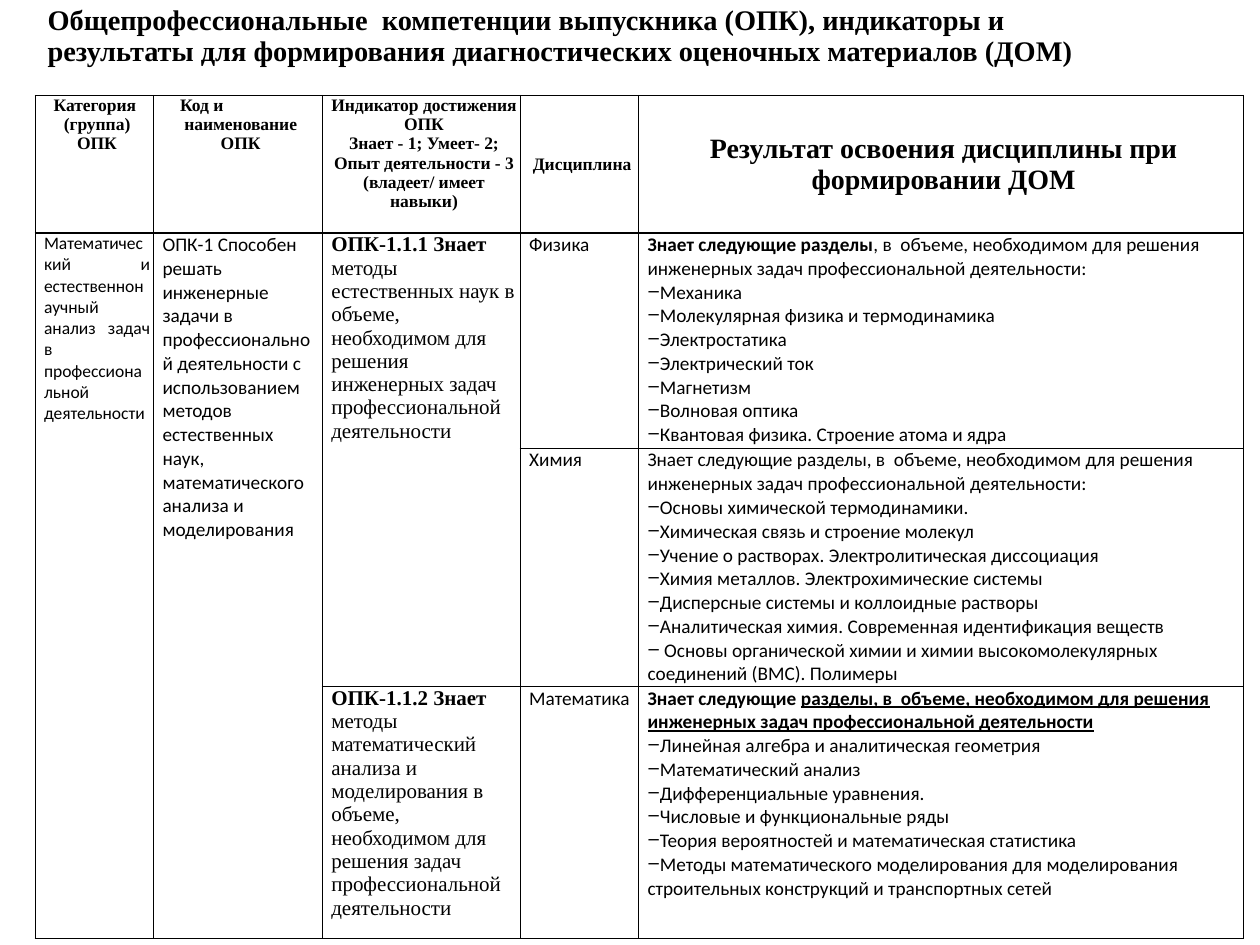
from lxml import etree
from pptx import Presentation
from pptx.dml.color import RGBColor
from pptx.enum.text import MSO_ANCHOR, PP_ALIGN
from pptx.oxml.ns import qn
from pptx.util import Inches, Pt

LEFT, CENTER, JUSTIFY = PP_ALIGN.LEFT, PP_ALIGN.CENTER, PP_ALIGN.JUSTIFY
TOP, MIDDLE = MSO_ANCHOR.TOP, MSO_ANCHOR.MIDDLE
COLORS = {"ink": "000000", "paper": "FFFFFF"}
SERIF, SANS = "Times New Roman", "Calibri"

TITLE = {"name": SERIF, "size": Pt(16.2), "bold": True}
HEADER = {"name": SERIF, "size": Pt(10), "bold": True}
RESULT_HEADER = {**HEADER, "size": Pt(16)}
CATEGORY = {"name": SANS, "size": Pt(10), "bold": False}
BODY = {**CATEGORY, "size": Pt(11)}
BODY_BOLD = {**BODY, "bold": True}
BODY_UNDERLINED = {**BODY_BOLD, "underline": True}
INDICATOR = {"name": SERIF, "size": Pt(12), "bold": False}
INDICATOR_CODE = {**INDICATOR, "bold": True}


def add_runs(paragraph, runs):
    for text, style in runs:
        run = paragraph.add_run()
        run.text = text
        run.font.color.rgb = RGBColor.from_string(COLORS["ink"])
        for attribute, value in style.items():
            setattr(run.font, attribute, value)


def fill_cell(cell, paragraphs, align=LEFT, anchor=TOP, topics=()):
    """Write paragraphs (lists of runs), then topics as a dashed list."""
    cell_format = {"margin_left": Inches(0.03), "margin_right": Inches(0.03),
                   "margin_top": 0, "margin_bottom": 0, "vertical_anchor": anchor}
    for attribute, value in cell_format.items():
        setattr(cell, attribute, value)
    lines = paragraphs + [[(topic, BODY)] for topic in topics]
    for index, runs in enumerate(lines):
        paragraph = cell.text_frame.paragraphs[0] if index == 0 else cell.text_frame.add_paragraph()
        paragraph.alignment = align
        properties = paragraph._p.get_or_add_pPr()
        properties.set("marL", str(Inches(0.04)))
        properties.set("indent", "0")
        if index >= len(paragraphs):
            etree.SubElement(properties, qn("a:buChar")).set("char", "‒")
        add_runs(paragraph, runs)


prs = Presentation()
prs.slide_width, prs.slide_height = Inches(10), Inches(7.5)
slide = prs.slides.add_slide(prs.slide_layouts[6])

# Title
title = slide.shapes.add_textbox(Inches(0.28), Inches(0.02), Inches(9), Inches(0.54)).text_frame
title.word_wrap = True
title.vertical_anchor = MIDDLE
title.paragraphs[0].line_spacing = 0.9
add_runs(title.paragraphs[0], [(
    "Общепрофессиональные  компетенции выпускника (ОПК), индикаторы и результаты "
    "для формирования диагностических оценочных материалов (ДОМ)", TITLE)])

# Table grid, each row tall enough for its longest cell
column_widths = [0.94, 1.34, 1.57, 0.94, 4.8]
row_heights = [1.09, 1.71, 1.89, 1.86]
table = slide.shapes.add_table(
    len(row_heights), len(column_widths), Inches(0.28), Inches(0.76),
    Inches(sum(column_widths)), Inches(sum(row_heights))).table
table.first_row = table.horz_banding = False
for column, width in zip(table.columns, column_widths):
    column.width = Inches(width)
for row, height in zip(table.rows, row_heights):
    row.height = Inches(height)

# Borders come before the fill in the cell properties
for cell in table.iter_cells():
    cell_properties = cell._tc.get_or_add_tcPr()
    for side in ("a:lnL", "a:lnR", "a:lnT", "a:lnB"):
        border = etree.SubElement(cell_properties, qn(side), w=str(Pt(1)))
        line_fill = etree.SubElement(border, qn("a:solidFill"))
        etree.SubElement(line_fill, qn("a:srgbClr"), val=COLORS["ink"])
    cell.fill.solid()
    cell.fill.fore_color.rgb = RGBColor.from_string(COLORS["paper"])

for column, last_row in ((0, 3), (1, 3), (2, 2)):
    table.cell(1, column).merge(table.cell(last_row, column))

# Header row
headers = [
    (["Категория  (группа) ОПК"], HEADER, TOP),
    (["Код и", "наименование", "ОПК"], HEADER, TOP),
    (["Индикатор достижения ОПК",
      "Знает - 1; Умеет- 2; Опыт деятельности - 3 (владеет/ имеет навыки)"], HEADER, TOP),
    (["Дисциплина"], HEADER, MIDDLE),
    (["Результат освоения дисциплины при формировании ДОМ"], RESULT_HEADER, MIDDLE),
]
for column, (lines, style, anchor) in enumerate(headers):
    fill_cell(table.cell(0, column), [[(line, style)] for line in lines], CENTER, anchor)
code_line = table.cell(0, 1).text_frame.paragraphs[0]
code_line.alignment = LEFT
code_line._p.get_or_add_pPr().set("marL", str(Inches(0.18)))

# Competence group and code
fill_cell(table.cell(1, 0), [[(
    "Математический и естественнонаучный анализ задач в профессиональной деятельности",
    CATEGORY)]], JUSTIFY)
fill_cell(table.cell(1, 1), [[(
    "ОПК-1 Способен решать инженерные задачи в профессиональной деятельности с использованием "
    "методов естественных наук, математического анализа и моделирования", BODY)]])

# Indicators
indicators = {
    1: ("ОПК-1.1.1 Знает ", "методы естественных наук в объеме, необходимом для решения "
        "инженерных задач профессиональной деятельности"),
    3: ("ОПК-1.1.2 Знает ", "методы математический анализа и моделирования в объеме, "
        "необходимом для решения задач профессиональной деятельности"),
}
for row, (code, description) in indicators.items():
    fill_cell(table.cell(row, 2), [[(code, INDICATOR_CODE), (description, INDICATOR)]])

# Disciplines and their learning results
scope = "в  объеме, необходимом для решения инженерных задач профессиональной деятельности"
disciplines = [
    ("Физика",
     [("Знает следующие разделы", BODY_BOLD), (f", {scope}:", BODY)],
     ["Механика", "Молекулярная физика и термодинамика", "Электростатика",
      "Электрический ток", "Магнетизм", "Волновая оптика",
      "Квантовая физика. Строение атома и ядра"]),
    ("Химия",
     [(f"Знает следующие разделы, {scope}:", BODY)],
     ["Основы химической термодинамики.", "Химическая связь и строение молекул",
      "Учение о растворах. Электролитическая диссоциация",
      "Химия металлов. Электрохимические системы",
      "Дисперсные системы и коллоидные растворы",
      "Аналитическая химия. Современная идентификация веществ",
      " Основы органической химии и химии высокомолекулярных соединений (ВМС). Полимеры"]),
    ("Математика",
     [("Знает следующие ", BODY_BOLD), (f"разделы, {scope}", BODY_UNDERLINED)],
     ["Линейная алгебра и аналитическая геометрия", "Математический анализ",
      "Дифференциальные уравнения.", "Числовые и функциональные ряды",
      "Теория вероятностей и математическая статистика",
      "Методы математического моделирования для моделирования строительных конструкций "
      "и транспортных сетей"]),
]
for row, (discipline, intro, topics) in enumerate(disciplines, start=1):
    fill_cell(table.cell(row, 3), [[(discipline, BODY)]])
    fill_cell(table.cell(row, 4), [intro], topics=topics)

prs.save("out.pptx")
